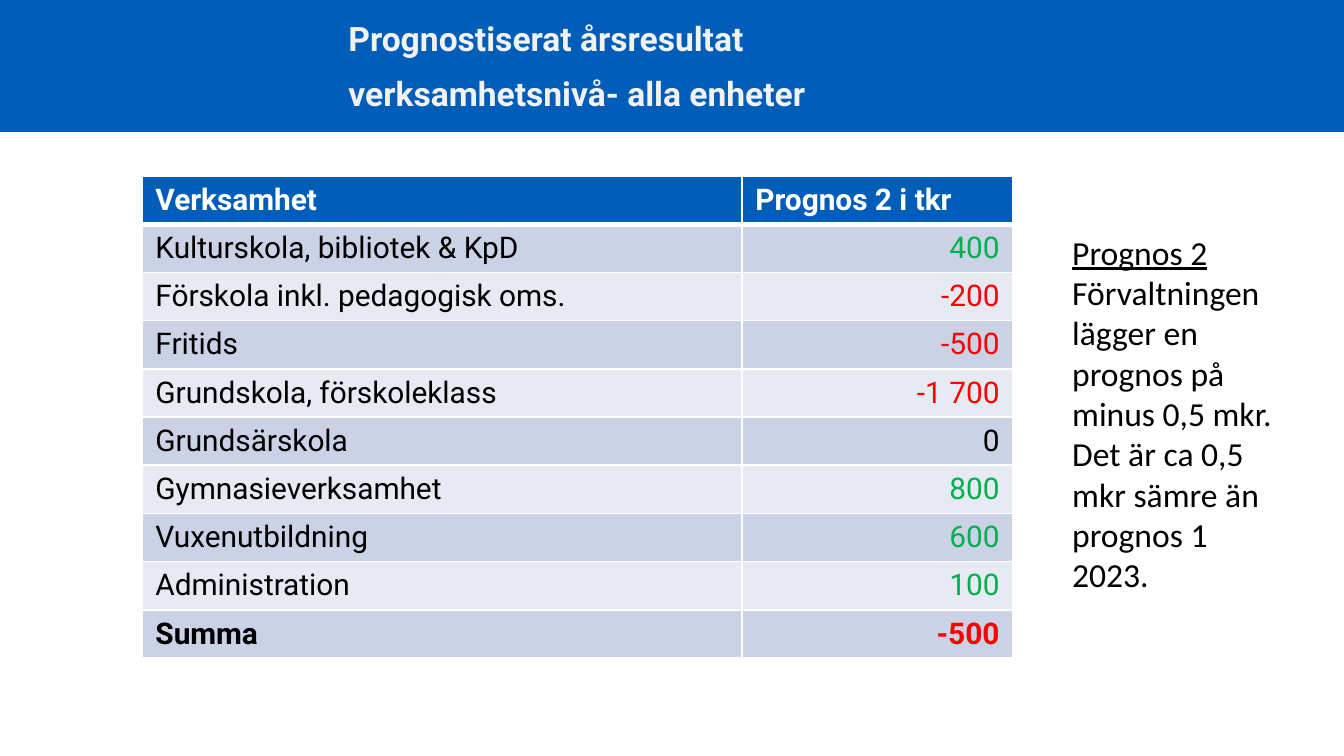
from typing import NamedTuple

import pptx
import pptx.dml.color
import pptx.enum.shapes
import pptx.enum.text
import pptx.oxml
import pptx.oxml.ns
import pptx.util

WIDE, HIGH = 1344, 756
SCALE = 9144000 / WIDE
BLUE, WHITE, BLACK = "005EB8", "FFFFFF", "000000"
GREEN, RED = "00B050", "FF0000"
BANDS = ("CCD2E6", "E7EAF3")
ALIGN = pptx.enum.text.PP_ALIGN


class Box(NamedTuple):
    left: int
    top: int
    width: int
    height: int


class Row(NamedTuple):
    name: str
    value: str
    bold: bool = False


ROWS = [
    Row("Kulturskola, bibliotek & KpD", "400"),
    Row("Förskola inkl. pedagogisk oms.", "-200"),
    Row("Fritids", "-500"),
    Row("Grundskola, förskoleklass", "-1 700"),
    Row("Grundsärskola", "0"),
    Row("Gymnasieverksamhet", "800"),
    Row("Vuxenutbildning", "600"),
    Row("Administration", "100"),
    Row("Summa", "-500", True),
]
NOTE = [
    "Prognos 2",
    "Förvaltningen lägger en prognos på minus 0,5 mkr.",
    "Det är ca 0,5 mkr sämre än prognos 1 2023.",
]


def px(count: int) -> int:
    return round(count * SCALE)


def place(box: Box) -> list[int]:
    return [px(side) for side in box]


def color(code: str):
    return pptx.dml.color.RGBColor.from_string(code)


def style(para, size: int, face: str, code: str, bold: bool = False) -> None:
    font = para.font
    font.size, font.name, font.bold = pptx.util.Pt(size), face, bold
    font.color.rgb = color(code)


def tint(value: str) -> str:
    if value == "0":
        return BLACK
    return RED if value.startswith("-") else GREEN


def edge(cell, side: str, points: int) -> None:
    line = pptx.oxml.parse_xml(
        f'<a:{side} {pptx.oxml.ns.nsdecls("a")} w="{points * 12700}">'
        f'<a:solidFill><a:srgbClr val="{WHITE}"/></a:solidFill></a:{side}>'
    )
    cell._tc.get_or_add_tcPr().append(line)


def fill_cell(cell, text: str, code: str, back: str, bold: bool,
              align, top: int = 1, base: int = 1) -> None:
    # Borders go in ahead of the fill
    for side, points in (("lnL", 1), ("lnR", 1), ("lnT", top), ("lnB", base)):
        edge(cell, side, points)
    cell.fill.solid()
    cell.fill.fore_color.rgb = color(back)
    cell.text = text
    para = cell.text_frame.paragraphs[0]
    para.alignment = align
    style(para, 16, "Roboto", code, bold)


def add_title(slide) -> None:
    title = slide.shapes.title
    title.left, title.top, title.width, title.height = place(Box(335, 16, 696, 121))
    frame = title.text_frame
    frame.text = "Prognostiserat årsresultat\nverksamhetsnivå- alla enheter"
    frame.auto_size = pptx.enum.text.MSO_AUTO_SIZE.NONE
    frame.vertical_anchor = pptx.enum.text.MSO_ANCHOR.TOP
    for spot, para in enumerate(frame.paragraphs):
        para.alignment = ALIGN.LEFT
        para.line_spacing = 0.9
        para.space_before = pptx.util.Pt(10 if spot else 0)
        style(para, 18, "Roboto", "F2F2F2", True)


def add_banner(slide) -> None:
    kind = pptx.enum.shapes.MSO_SHAPE.RECTANGLE
    banner = slide.shapes.add_shape(kind, *place(Box(0, 0, WIDE, 132)))
    banner.shadow.inherit = False
    banner.fill.solid()
    banner.fill.fore_color.rgb = color(BLUE)
    banner.line.fill.background()
    # Put the banner behind the title
    slide.shapes.title.element.addprevious(banner.element)


def add_grid(slide) -> None:
    count = len(ROWS) + 1
    box = Box(142, 176, 871, 48 * count)
    table = slide.shapes.add_table(count, 2, *place(box)).table
    for column, width in zip(table.columns, (600, 271)):
        column.width = px(width)
    for spot, text in enumerate(("Verksamhet", "Prognos 2 i tkr")):
        fill_cell(table.cell(0, spot), text, WHITE, BLUE, True, ALIGN.LEFT, base=3)
    for spot, row in enumerate(ROWS, 1):
        back = BANDS[(spot - 1) % 2]
        top = 3 if spot == 1 else 1
        fill_cell(table.cell(spot, 0), row.name, BLACK, back, row.bold,
                  ALIGN.LEFT, top)
        fill_cell(table.cell(spot, 1), row.value, tint(row.value), back, row.bold,
                  ALIGN.RIGHT, top)


def add_note(slide) -> None:
    frame = slide.shapes.add_textbox(*place(Box(1059, 225, 237, 380))).text_frame
    frame.word_wrap = True
    frame.text = "\n".join(NOTE)
    for para in frame.paragraphs:
        style(para, 18, "Calibri", BLACK)
    frame.paragraphs[0].font.underline = True


def main() -> None:
    deck = pptx.Presentation()
    deck.slide_width, deck.slide_height = px(WIDE), px(HIGH)
    slide = deck.slides.add_slide(deck.slide_layouts[5])
    add_title(slide)
    add_banner(slide)
    add_grid(slide)
    add_note(slide)
    deck.save("out.pptx")


if __name__ == "__main__":
    main()
